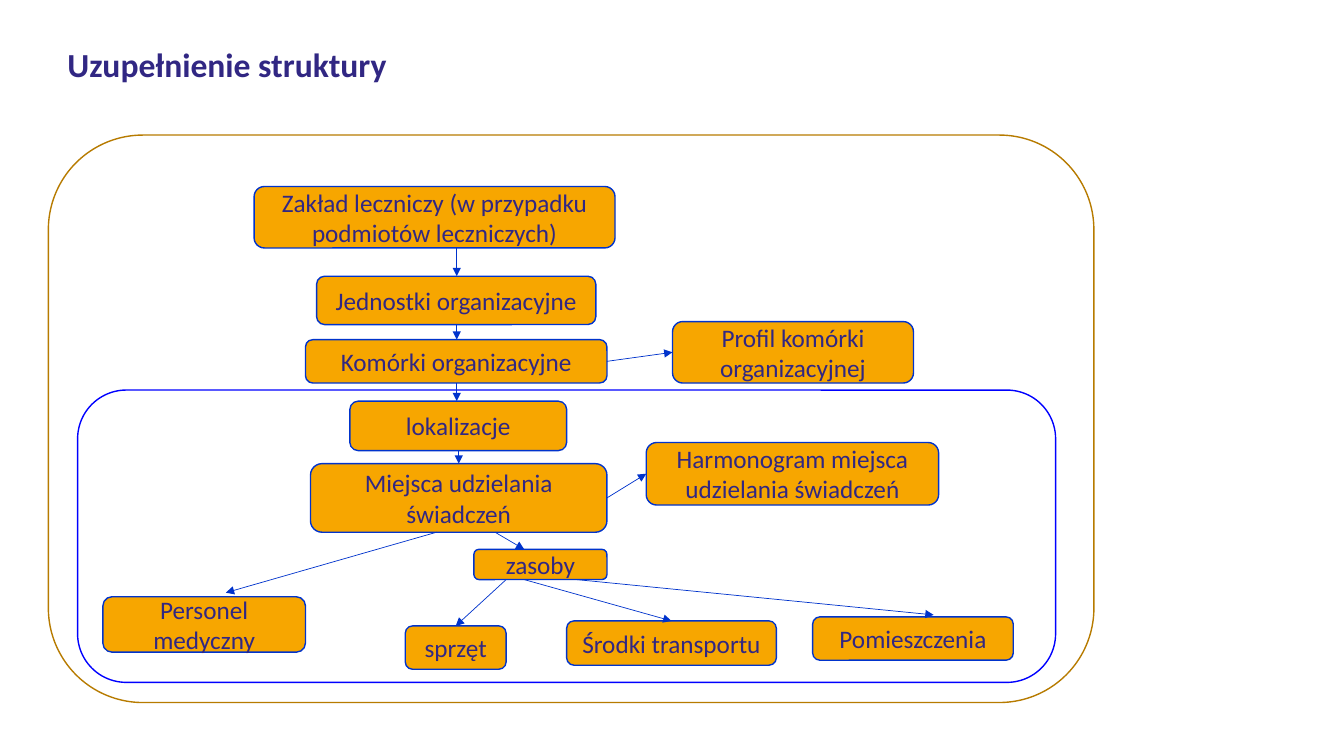
from pptx import Presentation
from pptx.dml.color import RGBColor
from pptx.enum.shapes import MSO_CONNECTOR, MSO_SHAPE
from pptx.enum.text import MSO_ANCHOR, PP_ALIGN
from pptx.oxml.ns import qn
from pptx.util import Inches, Pt
from lxml.etree import SubElement

NAVY, ORANGE, BLUE = "312783", "F7A600", "0033CC"
BROWN, BRIGHT_BLUE = "B77B00", "0000FF"
LEFT_SIDE, RIGHT_SIDE = 1, 3

NODES = {
    "Zakład leczniczy (w przypadku podmiotów leczniczych)": (2.04, 0.51, 3.58, 0.61),
    "Jednostki organizacyjne": (2.66, 1.4, 2.77, 0.48),
    "Komórki organizacyjne": (2.55, 2.03, 2.99, 0.43),
    "lokalizacje": (2.99, 2.64, 2.15, 0.49),
    "Miejsca udzielania świadczeń": (2.6, 3.26, 2.94, 0.68),
    "Profil komórki organizacyjnej": (6.19, 1.85, 2.39, 0.61),
    "Harmonogram miejsca udzielania świadczeń": (5.93, 3.05, 2.9, 0.62),
    "Personel medyczny": (0.54, 4.58, 2.01, 0.55),
    "zasoby": (4.22, 4.11, 1.32, 0.3),
    "sprzęt": (3.54, 4.87, 1, 0.43),
    "Środki transportu": (5.14, 4.82, 2.08, 0.44),
    "Pomieszczenia": (7.58, 4.78, 1.99, 0.43),
}
DOWN_ARROWS = [
    ("Zakład leczniczy (w przypadku podmiotów leczniczych)", 4.05,
     "Jednostki organizacyjne", 4.05, 0),
    ("Jednostki organizacyjne", 4.05, "Komórki organizacyjne", 4.05, 0),
    ("Komórki organizacyjne", 4.05, "lokalizacje", 4.05, 0),
    ("lokalizacje", 4.07, "Miejsca udzielania świadczeń", 4.07, 0),
    ("Miejsca udzielania świadczeń", 3.85, "Personel medyczny", 1.76, 0.04),
    ("Miejsca udzielania świadczeń", 4.43, "zasoby", 4.72, 0),
    ("zasoby", 4.54, "sprzęt", 4.04, 0),
    ("zasoby", 4.72, "Środki transportu", 6.18, 0),
    ("zasoby", 5.24, "Pomieszczenia", 8.78, 0.02),
]
SIDE_ARROWS = [
    ("Komórki organizacyjne", "Profil komórki organizacyjnej"),
    ("Miejsca udzielania świadczeń", "Harmonogram miejsca udzielania świadczeń"),
]


def rgb(color):
    """Turn a hex string into a colour."""
    return RGBColor.from_string(color)


def write_text(sp, text, size, align, bold=False):
    """Write one vertically centred paragraph into a shape."""
    tf = sp.text_frame
    tf.word_wrap = True
    tf.vertical_anchor = MSO_ANCHOR.MIDDLE
    tf.text = text
    p = tf.paragraphs[0]
    p.alignment = align
    font = p.runs[0].font
    font.name, font.size, font.bold = "Calibri", Pt(size), bold
    font.color.rgb = rgb(NAVY)
    return p


def add_rounded(s, left, top, width, height, line, fill=None):
    """Add a rounded rectangle, hollow unless a fill is given."""
    sp = s.shapes.add_shape(MSO_SHAPE.ROUNDED_RECTANGLE, Inches(left),
                            Inches(top), Inches(width), Inches(height))
    sp.shadow.inherit = False
    sp.line.color.rgb = rgb(line)
    sp.line.width = Pt(1)
    if fill:
        sp.fill.solid()
        sp.fill.fore_color.rgb = rgb(fill)
    else:
        sp.fill.background()
    return sp


def add_arrow(s, x1, y1, x2, y2):
    """Add a thin arrow between two points given in EMU."""
    arrow = s.shapes.add_connector(MSO_CONNECTOR.STRAIGHT, x1, y1, x2, y2)
    arrow.line.color.rgb = rgb(BLUE)
    arrow.line.width = Pt(0.5)
    SubElement(arrow.line._get_or_add_ln(), qn("a:tailEnd"), type="triangle")
    SubElement(arrow._element.spPr, qn("a:effectLst"))
    return arrow


def add_title(s, left, top, width, height):
    """Add the slide title."""
    sp = s.shapes.add_textbox(Inches(left), Inches(top), Inches(width), Inches(height))
    p = write_text(sp, "Uzupełnienie struktury", 24, PP_ALIGN.LEFT, bold=True)
    p.line_spacing = 0.9


def add_structure(s, left, top, width, height):
    """Add the framed structure diagram inside the given box."""
    add_rounded(s, left, top, width, height, BROWN)
    add_rounded(s, left + 0.29, top + 2.53, width - 0.67, height - 2.73, BRIGHT_BLUE)

    nodes = {}
    for text, (x, y, w, h) in NODES.items():
        sp = add_rounded(s, left + x, top + y, w, h, BLUE, ORANGE)
        write_text(sp, text, 18, PP_ALIGN.CENTER)
        nodes[text] = sp

    for source, x1, target, x2, gap in DOWN_ARROWS:
        start = nodes[source]
        add_arrow(s, Inches(left + x1), start.top + start.height,
                  Inches(left + x2), nodes[target].top - Inches(gap))

    for source, target in SIDE_ARROWS:
        arrow = add_arrow(s, 0, 0, 0, 0)
        arrow.begin_connect(nodes[source], RIGHT_SIDE)
        arrow.end_connect(nodes[target], LEFT_SIDE)


def main():
    """Build and save the slide."""
    prs = Presentation()
    prs.slide_width, prs.slide_height = Inches(13.33), Inches(7.5)
    s = prs.slides.add_slide(prs.slide_layouts[6])
    add_title(s, 0.57, 0.4, 11.5, 0.52)
    add_structure(s, 0.48, 1.34, 10.37, 5.63)
    prs.save("out.pptx")


if __name__ == "__main__":
    main()
